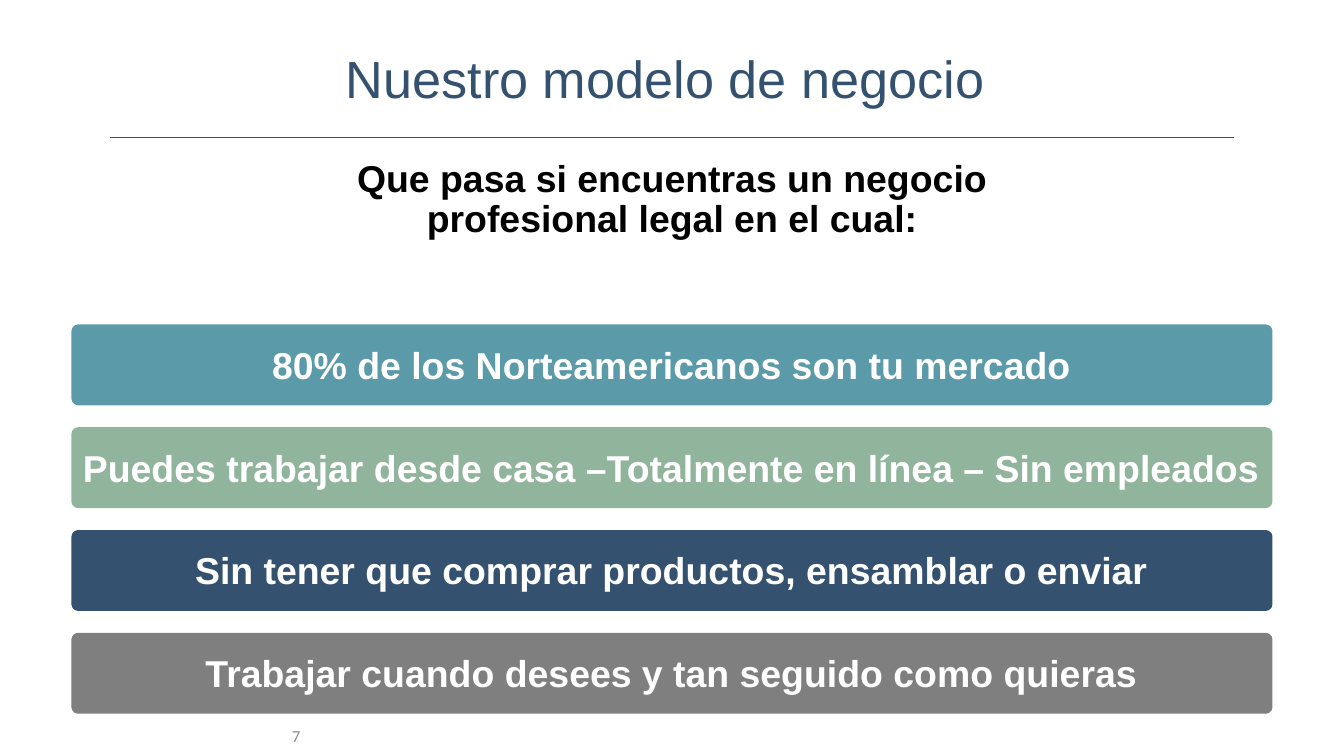
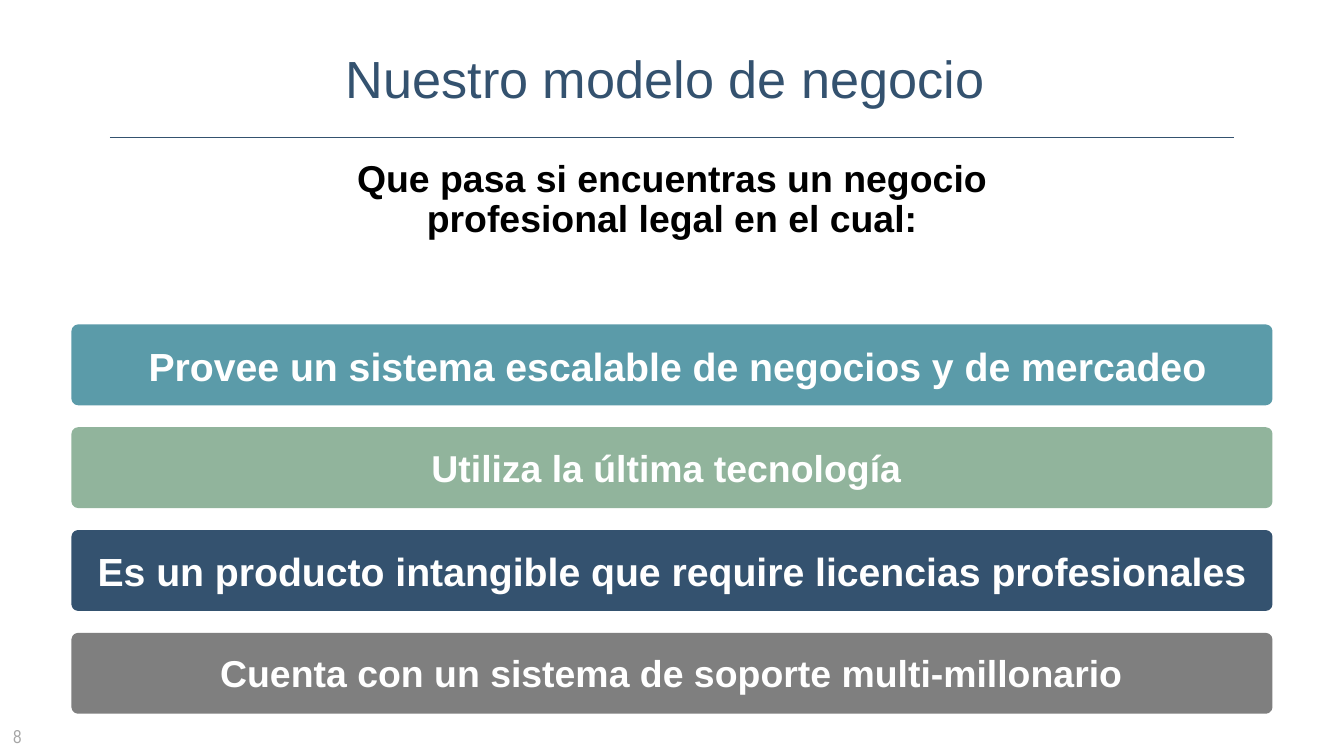
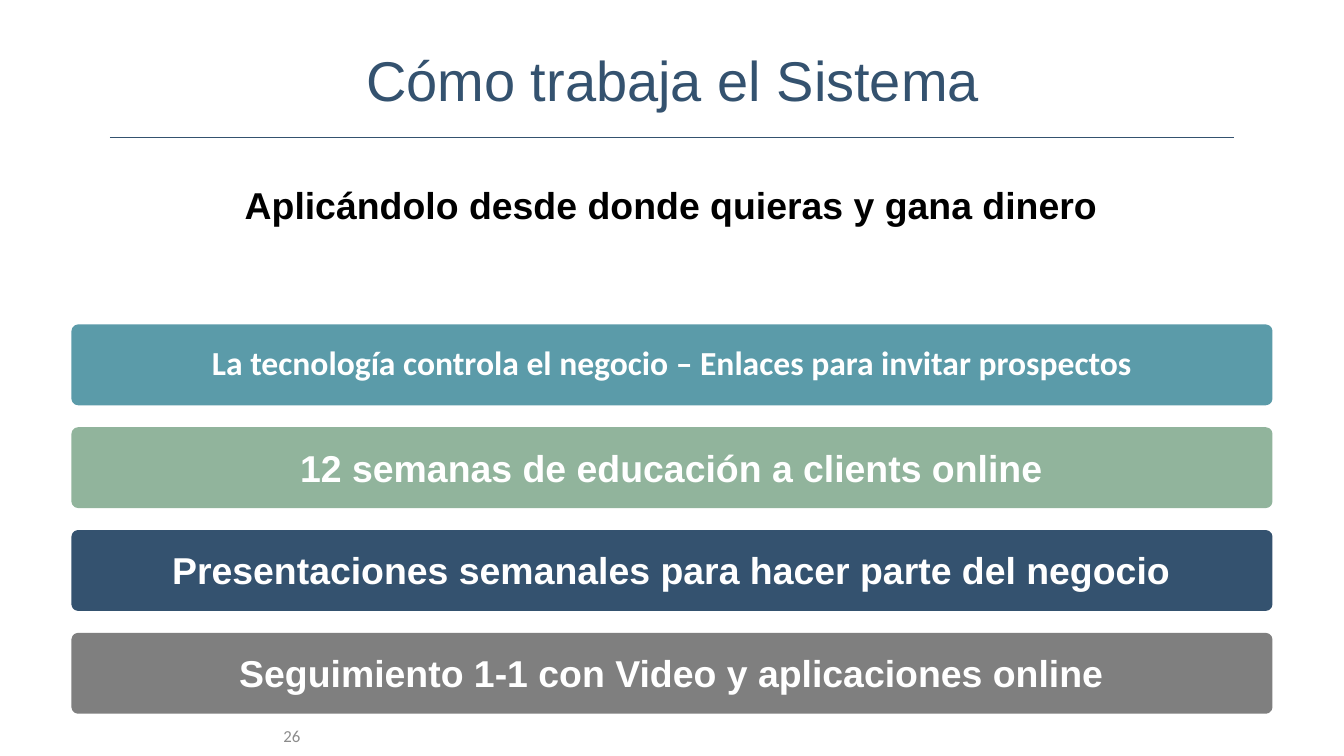
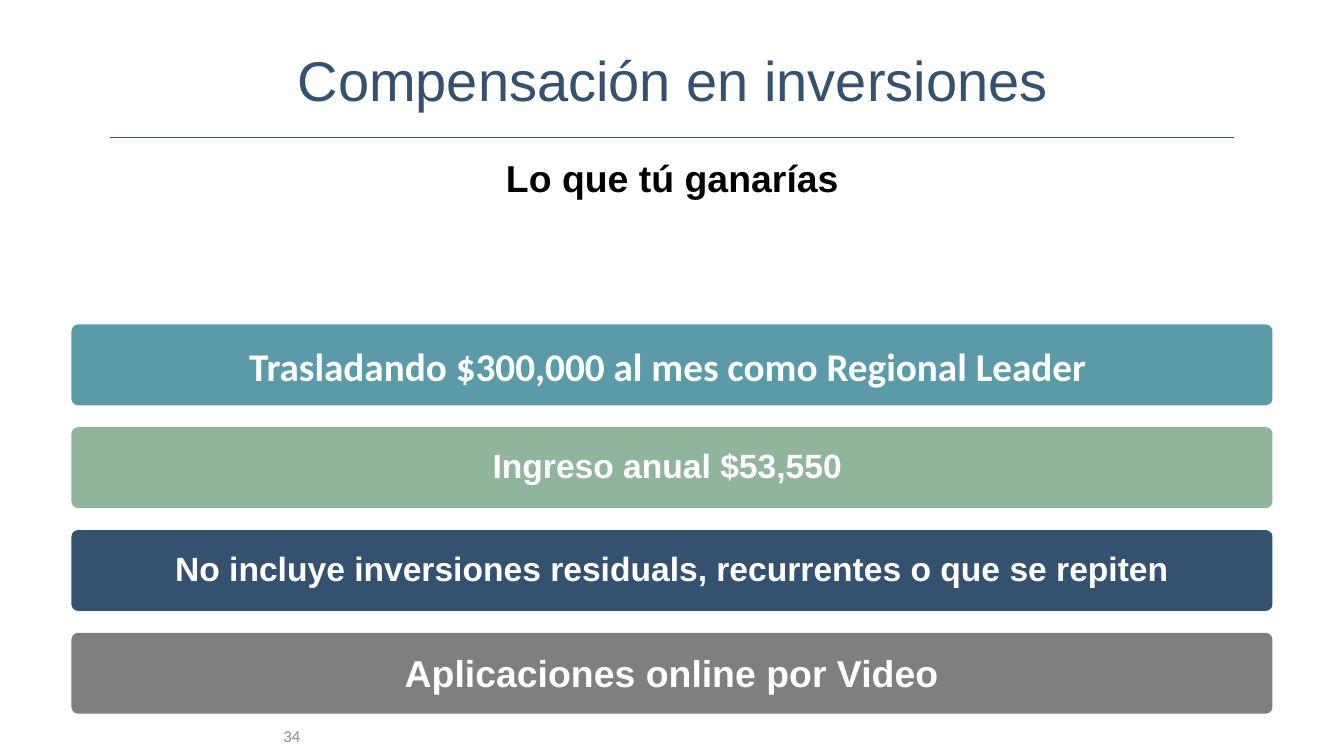
from lxml import etree
from pptx import Presentation
from pptx import util as u
from pptx.dml.color import RGBColor
from pptx.enum import shapes, text
from pptx.oxml.ns import qn

PX = 9144  # 100 px to the inch
COLORS = {
    "navy": "34526F", "sage": "91B49C", "teal": "5B9BA9", "gray": "7F7F7F",
    "black": "000000", "white": "FFFFFF", "page": "8C8C8C", "pale": "A5A5A5",
}
BANDS = ("teal", "sage", "navy", "gray")
BAND_TOP, BAND_STEP = 324, 102
MID, LEFT, RIGHT = text.PP_ALIGN.CENTER, text.PP_ALIGN.LEFT, text.PP_ALIGN.RIGHT

NARROW = (274, 152, 786, 96)
WIDE = (222, 179, 888, 96)
PAGE = dict(size=12, font="Calibri", color="page", align=RIGHT)
PALE = dict(size=13.3, font="Arial Narrow", color="pale", align=LEFT)
ASK = "Que pasa si encuentras un negocio profesional legal en el cual:"
MODEL = ("Nuestro modelo de negocio ", 37.3)

# Each band: text, size, font
SLIDES = [
    dict(page="7", style=PAGE, title=MODEL, lead=ASK, place=NARROW, bands=[
        ("80% de los Norteamericanos son tu mercado", 26.7, "Arial"),
        ("Puedes trabajar desde casa –Totalmente en línea – Sin empleados", 26.7, "Arial"),
        ("Sin tener que comprar productos, ensamblar o enviar", 26.7, "Arial"),
        ("Trabajar cuando desees y tan seguido como quieras", 26.7, "Arial"),
    ]),
    dict(page="8", style=PALE, title=MODEL, lead=ASK, place=NARROW, bands=[
        (" Provee un sistema escalable de negocios y de mercadeo", 28, "Arial"),
        ("Utiliza la última tecnología ", 26.7, "Arial"),
        ("Es un producto intangible que require licencias profesionales", 28, "Arial"),
        ("Cuenta con un sistema de soporte multi-millonario", 26.7, "Arial"),
    ]),
    dict(page="26", style=PAGE, title=("Cómo trabaja el Sistema", 40),
         lead="Aplicándolo desde donde quieras y gana dinero", place=WIDE, bands=[
        ("La tecnología controla el negocio – Enlaces para invitar prospectos", 24, "Calibri"),
        ("12 semanas de educación a clients online", 26.7, "Arial"),
        ("Presentaciones semanales para hacer parte del negocio", 26.7, "Arial"),
        ("Seguimiento 1-1 con Video y aplicaciones online", 26.7, "Arial"),
    ]),
    dict(page="34", style=PAGE, title=("Compensación en inversiones", 40),
         lead="Lo que tú ganarías", place=NARROW, bands=[
        ("Trasladando $300,000 al mes como Regional Leader ", 28, "Calibri"),
        ("Ingreso anual $53,550 ", 24, "Arial"),
        ("No incluye inversiones residuals, recurrentes o que se repiten", 24, "Arial"),
        ("Aplicaciones online por Video", 26.7, "Arial"),
    ]),
]


def px(*nums):
    return [u.Emu(n * PX) for n in nums]


def rgb(name):
    return RGBColor.from_string(COLORS[name])


def write(shape, words, size, color, font="Arial", bold=False, align=MID,
          space=1.0, inset=(13, 7), anchor=text.MSO_ANCHOR.TOP):
    frame = shape.text_frame
    frame.text = words
    frame.word_wrap = True
    frame.vertical_anchor = anchor
    side, edge = px(*inset)
    frame.margin_left = frame.margin_right = side
    frame.margin_top = frame.margin_bottom = edge
    para = frame.paragraphs[0]
    para.alignment = align
    para.line_spacing = space
    for run in para.runs:
        run.font.size = u.Pt(size)
        run.font.name = font
        run.font.bold = bold
        run.font.color.rgb = rgb(color)


def label(slide, box, words, **style):
    write(slide.shapes.add_textbox(*px(*box)), words, **style)


def rule(slide):
    """Draw the thin line below the title."""
    line = slide.shapes.add_connector(
        shapes.MSO_CONNECTOR.STRAIGHT, *px(109, 136, 1224, 136))
    line.line.color.rgb = rgb("navy")
    line.line.width = u.Pt(0.75)
    etree.SubElement(line._element.spPr, qn("a:effectLst"))


def band(slide, top, color, words, size, font):
    bar = slide.shapes.add_shape(
        shapes.MSO_SHAPE.ROUNDED_RECTANGLE, *px(73, top, 1187, 76))
    bar.adjustments[0] = 0.06
    bar.shadow.inherit = False
    bar.fill.solid()
    bar.fill.fore_color.rgb = rgb(color)
    bar.line.color.rgb = rgb(color)
    bar.line.width = u.Pt(3)
    write(bar, words, size, "white", font, bold=True, inset=(0, 14))


def build(slide, page, style, title, lead, place, bands):
    label(slide, (0, 710, 311, 40), page, anchor=text.MSO_ANCHOR.MIDDLE, **style)
    words, size = title
    label(slide, (105, 48, 1124, 74), words, size=size, color="navy", space=0.85)
    rule(slide)
    label(slide, place, lead, size=26.7, color="black", bold=True, space=0.9)
    for i, (color, item) in enumerate(zip(BANDS, bands)):
        band(slide, BAND_TOP + i * BAND_STEP, color, *item)


def main():
    deck = Presentation()
    deck.slide_width, deck.slide_height = px(1333, 750)
    for parts in SLIDES:
        build(deck.slides.add_slide(deck.slide_layouts[6]), **parts)
    deck.save("out.pptx")


if __name__ == "__main__":
    main()
